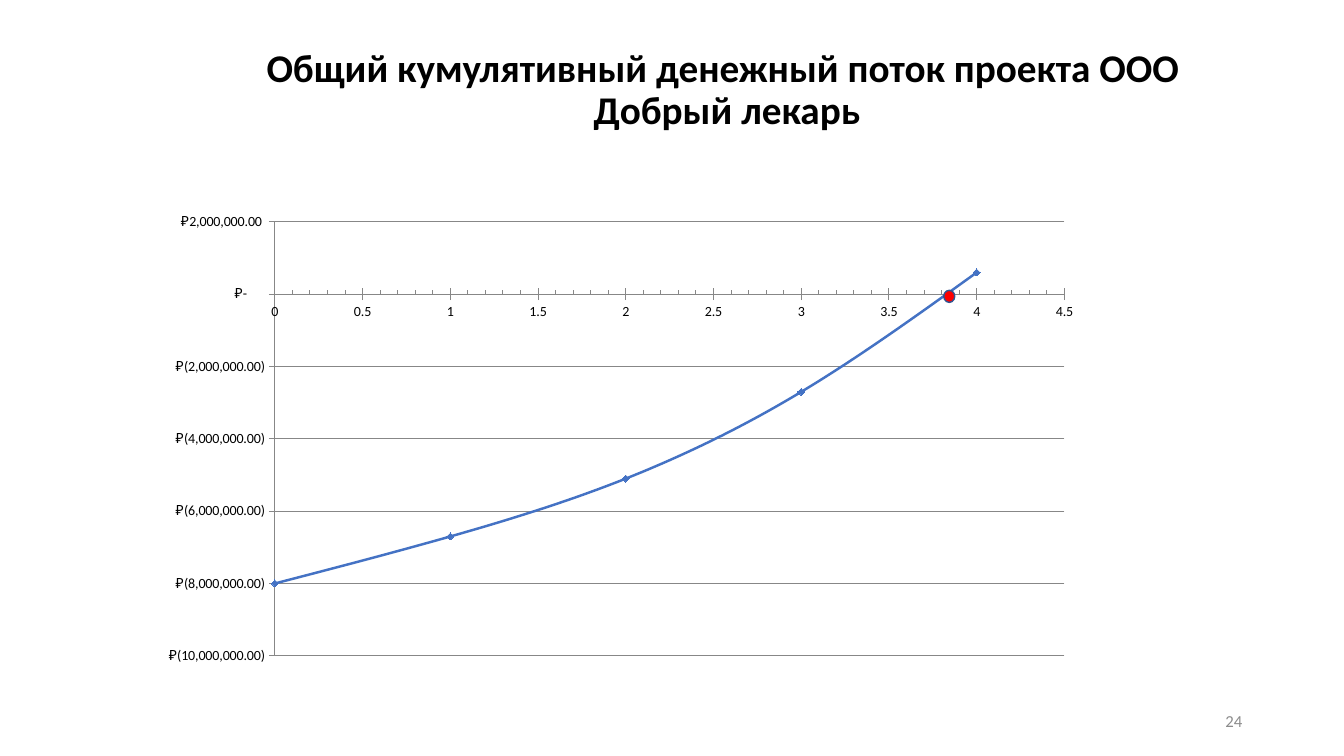
from typing import NamedTuple

from pptx import Presentation
from pptx.chart.axis import ValueAxis
from pptx.chart.data import XyChartData
from pptx.dml.color import RGBColor
from pptx.enum.chart import XL_CHART_TYPE, XL_MARKER_STYLE, XL_TICK_MARK
from pptx.enum.shapes import MSO_SHAPE
from pptx.enum.text import MSO_ANCHOR, MSO_AUTO_SIZE, PP_ALIGN
from pptx.oxml import parse_xml
from pptx.oxml.ns import nsdecls, qn
from pptx.text.text import TextFrame
from pptx.util import Inches, Pt

FONT = "Calibri"
BLACK = RGBColor(0x00, 0x00, 0x00)
GRAY = RGBColor(0x8C, 0x8C, 0x8C)
AXIS_GRAY = RGBColor(0x87, 0x87, 0x87)
BLUE = RGBColor(0x44, 0x72, 0xC4)
DARK_BLUE = RGBColor(0x32, 0x54, 0x91)
RED = RGBColor(0xFF, 0x00, 0x00)
RUBLES = '"₽"#,##0.00_);"₽"\\(#,##0.00\\);"₽-"??_)'


class CashPoint(NamedTuple):
    year: int
    total: int


class AxisScale(NamedTuple):
    low: float
    high: float
    major: float
    number_format: str
    major_tick: XL_TICK_MARK
    minor_tick: XL_TICK_MARK


CASH_FLOW = [
    CashPoint(0, -8_000_000),
    CashPoint(1, -6_700_000),
    CashPoint(2, -5_100_000),
    CashPoint(3, -2_700_000),
    CashPoint(4, 600_000),
]
YEARS = AxisScale(0, 4.5, 0.5, "General", XL_TICK_MARK.CROSS, XL_TICK_MARK.INSIDE)
MONEY = AxisScale(-10_000_000, 2_000_000, 2_000_000, RUBLES,
                  XL_TICK_MARK.OUTSIDE, XL_TICK_MARK.NONE)


def write(tf: TextFrame, text: str, *, size: float, color: RGBColor,
          align: PP_ALIGN, anchor: MSO_ANCHOR, bold: bool = False,
          spacing: float = 1.0) -> None:
    tf.word_wrap = True
    tf.auto_size = MSO_AUTO_SIZE.NONE
    tf.vertical_anchor = anchor
    p = tf.paragraphs[0]
    p.text = text
    p.alignment = align
    p.line_spacing = spacing
    for r in p.runs:
        r.font.name = FONT
        r.font.size = Pt(size)
        r.font.bold = bold
        r.font.color.rgb = color


def format_axis(axis: ValueAxis, scale: AxisScale, gridlines: bool) -> None:
    axis.minimum_scale, axis.maximum_scale = scale.low, scale.high
    axis.major_unit = scale.major
    axis.minor_unit = scale.major / 5
    axis.major_tick_mark = scale.major_tick
    axis.minor_tick_mark = scale.minor_tick
    axis.tick_labels.number_format = scale.number_format
    axis.tick_labels.number_format_is_linked = False
    lines = [axis.format.line]
    axis.has_major_gridlines = gridlines
    if gridlines:
        lines.append(axis.major_gridlines.format.line)
    for line in lines:
        line.color.rgb = AXIS_GRAY
        line.width = Pt(0.75)


prs = Presentation()
prs.slide_width, prs.slide_height = Inches(13.33), Inches(7.5)
s = prs.slides.add_slide(prs.slide_layouts[5])

# Title
title = s.shapes.title
title.left, title.top = Inches(1.46), Inches(0.48)
title.width, title.height = Inches(11.5), Inches(1.45)
title.text_frame.margin_top = 0
write(title.text_frame,
      "Общий кумулятивный денежный поток проекта ООО \vДобрый лекарь",
      size=28, color=BLACK, align=PP_ALIGN.CENTER, anchor=MSO_ANCHOR.TOP,
      bold=True, spacing=0.9)

# Slide number
number = s.shapes.add_textbox(Inches(9.42), Inches(6.95), Inches(3), Inches(0.4))
write(number.text_frame, "24", size=12, color=GRAY, align=PP_ALIGN.RIGHT,
      anchor=MSO_ANCHOR.MIDDLE)

# Cash flow chart
data = XyChartData()
flow = data.add_series("Series 1")
for point in CASH_FLOW:
    flow.add_data_point(point.year, point.total)
chart = s.shapes.add_chart(XL_CHART_TYPE.XY_SCATTER_SMOOTH, Inches(1.46), Inches(2.03),
                           Inches(9.38), Inches(4.64), data).chart
chart.has_legend = False
chart.has_title = False
chart.font.name = FONT
chart.font.size = Pt(10)
chart.font.color.rgb = BLACK
format_axis(chart.category_axis, YEARS, gridlines=False)
format_axis(chart.value_axis, MONEY, gridlines=True)

plot = chart.plots[0]
plot.vary_by_categories = False
curve = plot.series[0]
curve.format.line.color.rgb = BLUE
curve.format.line.width = Pt(1.75)
curve.marker.style = XL_MARKER_STYLE.DIAMOND
curve.marker.size = 5
curve.marker.format.fill.solid()
curve.marker.format.fill.fore_color.rgb = BLUE
curve.marker.format.line.color.rgb = BLUE
for smooth in curve._element.findall(qn("c:smooth")):
    smooth.set("val", "1")

# Fixed plot area, leaving room for the money labels
plot_area = chart._chartSpace.chart.plotArea
for layout in plot_area.findall(qn("c:layout")):
    plot_area.remove(layout)
plot_area.insert(0, parse_xml(
    f'<c:layout {nsdecls("c")}><c:manualLayout><c:layoutTarget val="inner"/>'
    '<c:xMode val="edge"/><c:yMode val="edge"/><c:x val="0.135"/><c:y val="0.037"/>'
    '<c:w val="0.835"/><c:h val="0.928"/></c:manualLayout></c:layout>'))

# Payback point
sp = s.shapes.add_shape(MSO_SHAPE.OVAL, Inches(9.36), Inches(2.88),
                        Inches(0.11), Inches(0.12))
sp.shadow.inherit = False
sp.fill.solid()
sp.fill.fore_color.rgb = RED
sp.line.color.rgb = DARK_BLUE
sp.line.width = Pt(1)

prs.save("out.pptx")
